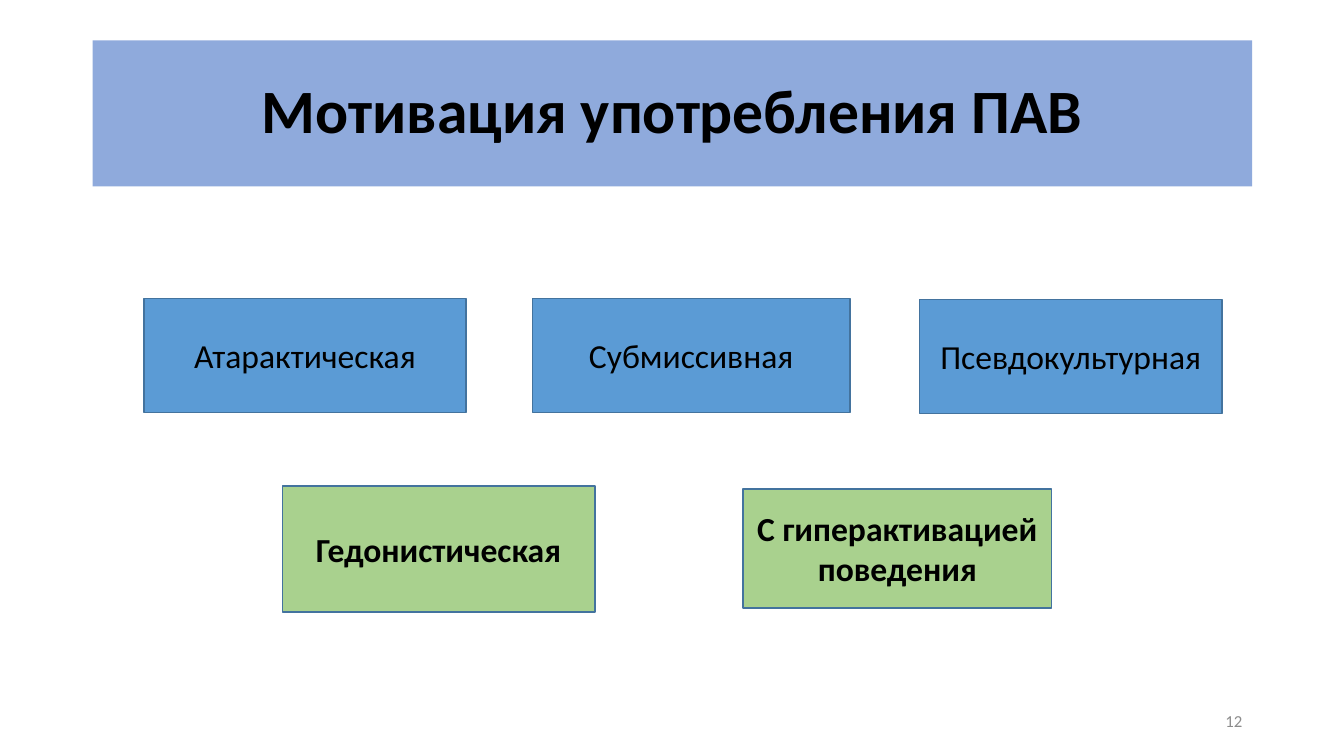
from pptx import Presentation
from pptx.dml.color import RGBColor
from pptx.enum.shapes import MSO_SHAPE
from pptx.enum.text import MSO_ANCHOR, PP_ALIGN
from pptx.util import Inches, Pt

RECTANGLE = MSO_SHAPE.RECTANGLE
PROCESS = MSO_SHAPE.FLOWCHART_PROCESS
MIDDLE = MSO_ANCHOR.MIDDLE
CENTER = PP_ALIGN.CENTER
RIGHT = PP_ALIGN.RIGHT

FONT = "Calibri"
COLORS = {
    "title": "8FAADC",
    "blue": "5B9BD5",
    "green": "A9D18E",
    "border": "43739E",
    "text": "000000",
    "number": "8C8C8C",
}

TITLE = ("Мотивация употребления ПАВ", (0.92, 0.4, 11.5, 1.45))
MOTIVES = [
    ("Атарактическая", (1.43, 2.96, 3.19, 1.13), "blue", False),
    ("Субмиссивная", (5.28, 2.96, 3.15, 1.13), "blue", False),
    ("Гедонистическая", (2.8, 4.82, 3.1, 1.25), "green", True),
    ("Псевдокультурная", (9.12, 2.97, 3, 1.13), "blue", False),
    ("С гиперактивацией поведения", (7.37, 4.85, 3.06, 1.18), "green", True),
]
SLIDE_NUMBER = ("12", (9.42, 6.95, 3, 0.4))


def color(name):
    return RGBColor.from_string(COLORS[name])


def write_text(shape, text, size, color_name="text", bold=False, alignment=CENTER):
    frame = shape.text_frame
    frame.word_wrap = True
    frame.vertical_anchor = MIDDLE
    frame.text = text
    paragraph = frame.paragraphs[0]
    paragraph.alignment = alignment
    font = paragraph.runs[0].font
    font.name = FONT
    font.size = Pt(size)
    font.bold = bold
    font.color.rgb = color(color_name)
    return paragraph


def add_box(slide, kind, box, fill):
    shape = slide.shapes.add_shape(kind, *map(Inches, box))
    shape.shadow.inherit = False
    shape.fill.solid()
    shape.fill.fore_color.rgb = color(fill)
    return shape


def main():
    presentation = Presentation()
    presentation.slide_width = Inches(13.33)
    presentation.slide_height = Inches(7.5)
    slide = presentation.slides.add_slide(presentation.slide_layouts[6])

    text, box = TITLE
    title = add_box(slide, RECTANGLE, box, "title")
    title.line.fill.background()
    write_text(title, text, 44, bold=True).line_spacing = 0.9

    for text, box, fill, bold in MOTIVES:
        motive = add_box(slide, PROCESS, box, fill)
        motive.line.color.rgb = color("border")
        motive.line.width = Pt(1)
        write_text(motive, text, 24, bold=bold)

    text, box = SLIDE_NUMBER
    number = slide.shapes.add_textbox(*map(Inches, box))
    write_text(number, text, 12, "number", alignment=RIGHT)

    presentation.save("out.pptx")


if __name__ == "__main__":
    main()
